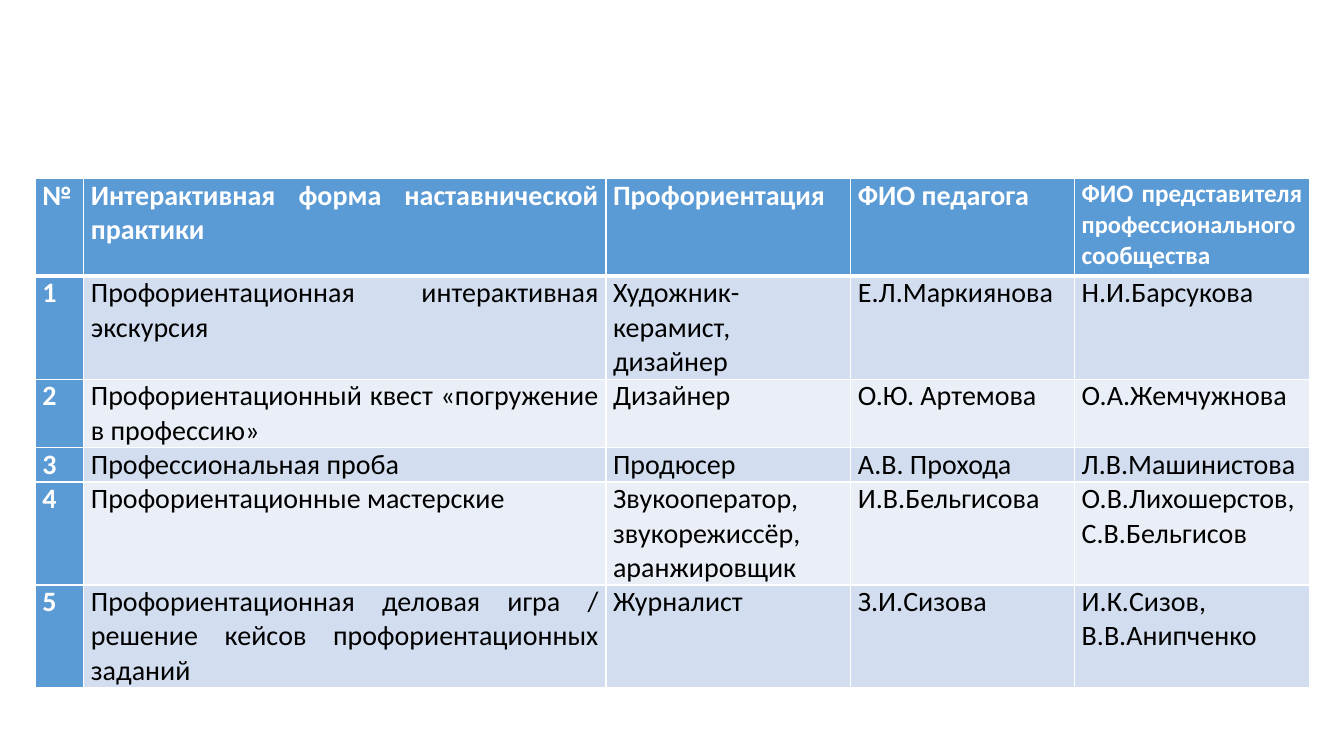
from dataclasses import dataclass

from lxml import etree
from pptx import Presentation
from pptx.dml.color import RGBColor
from pptx.enum.text import PP_ALIGN
from pptx.oxml.ns import qn
from pptx.util import Cm, Pt

JUSTIFY = PP_ALIGN.JUSTIFY
BLANK_LAYOUT = 6

HEADINGS = [
    "№",
    "Интерактивная форма наставнической практики",
    "Профориентация",
    "ФИО педагога",
    [("ФИО представителя ", 18), ("профессионального", 17.5), (" сообщества", 18)],
]
PRACTICES = [
    ("Профориентационная интерактивная экскурсия", "Художник-керамист, дизайнер",
     "Е.Л.Маркиянова", "Н.И.Барсукова"),
    ("Профориентационный квест «погружение в профессию»", "Дизайнер",
     "О.Ю. Артемова", "О.А.Жемчужнова"),
    ("Профессиональная проба", "Продюсер",
     "А.В. Прохода", "Л.В.Машинистова"),
    ("Профориентационные мастерские", "Звукооператор, звукорежиссёр, аранжировщик",
     "И.В.Бельгисова", "О.В.Лихошерстов,\nС.В.Бельгисов"),
    ("Профориентационная деловая игра / решение кейсов профориентационных заданий",
     "Журналист", "З.И.Сизова", "И.К.Сизов, В.В.Анипченко"),
]
COLUMN_WIDTHS = [1.22, 13.16, 6.17, 5.64, 5.92]
ROW_HEIGHTS = [2.46, 1.65, 1.65, 0.81, 2.46, 1.65]
TABLE_LEFT, TABLE_TOP = 0.89, 4.5
SIDE_MARGIN = 0.18


@dataclass(frozen=True)
class Theme:
    """Colours, font and sizes of the slide."""
    font: str = "Calibri"
    size: float = 20
    accent: str = "5B9BD5"
    bands: tuple = ("D2DEEF", "EAEFF7")
    light: str = "FFFFFF"
    dark: str = "000000"
    thin: float = 1
    thick: float = 3


THEME = Theme()


def write_text(cell, content, colour, bold):
    """Write a string, or a list of sized runs, into a cell."""
    if isinstance(content, str):
        lines = [[(line, THEME.size)] for line in content.split("\n")]
    else:
        lines = [content]
    frame = cell.text_frame
    for index, line in enumerate(lines):
        paragraph = frame.add_paragraph() if index else frame.paragraphs[0]
        paragraph.alignment = JUSTIFY
        for text, size in line:
            run = paragraph.add_run()
            run.text = text
            run.font.name = THEME.font
            run.font.size = Pt(size)
            run.font.bold = bold
            run.font.color.rgb = RGBColor.from_string(colour)


def draw_borders(cell, top, bottom):
    """Give a cell four solid borders, placed ahead of its fill."""
    properties = cell._tc.get_or_add_tcPr()
    widths = {"a:lnL": THEME.thin, "a:lnR": THEME.thin, "a:lnT": top, "a:lnB": bottom}
    for position, (tag, width) in enumerate(widths.items()):
        line = etree.Element(qn(tag), w=str(Pt(width)))
        fill = etree.SubElement(line, qn("a:solidFill"))
        etree.SubElement(fill, qn("a:srgbClr"), val=THEME.light)
        properties.insert(position, line)


def format_cell(cell, row, column, content):
    """Fill, border and write one cell according to its place."""
    accented = row == 0 or column == 0
    cell.margin_left = cell.margin_right = Cm(SIDE_MARGIN)
    cell.margin_top = cell.margin_bottom = 0
    cell.fill.solid()
    background = THEME.accent if accented else THEME.bands[(row - 1) % 2]
    cell.fill.fore_color.rgb = RGBColor.from_string(background)
    draw_borders(cell,
                 THEME.thick if row == 1 else THEME.thin,
                 THEME.thick if row == 0 else THEME.thin)
    write_text(cell, content, THEME.light if accented else THEME.dark, accented)


def add_practice_table(slide):
    """Add the table of mentoring practices."""
    rows = [HEADINGS]
    rows += [(str(number), *practice) for number, practice in enumerate(PRACTICES, 1)]
    shape = slide.shapes.add_table(
        len(rows), len(COLUMN_WIDTHS), Cm(TABLE_LEFT), Cm(TABLE_TOP),
        Cm(sum(COLUMN_WIDTHS)), Cm(sum(ROW_HEIGHTS)))
    table = shape.table
    table.first_col = True
    for column, width in zip(table.columns, COLUMN_WIDTHS):
        column.width = Cm(width)
    for row, height in zip(table.rows, ROW_HEIGHTS):
        row.height = Cm(height)
    for row, contents in enumerate(rows):
        for column, content in enumerate(contents):
            format_cell(table.cell(row, column), row, column, content)


def main():
    """Build the slide and save it."""
    presentation = Presentation()
    presentation.slide_width, presentation.slide_height = Cm(33.87), Cm(19.05)
    slide = presentation.slides.add_slide(presentation.slide_layouts[BLANK_LAYOUT])
    add_practice_table(slide)
    presentation.save("out.pptx")


if __name__ == "__main__":
    main()
